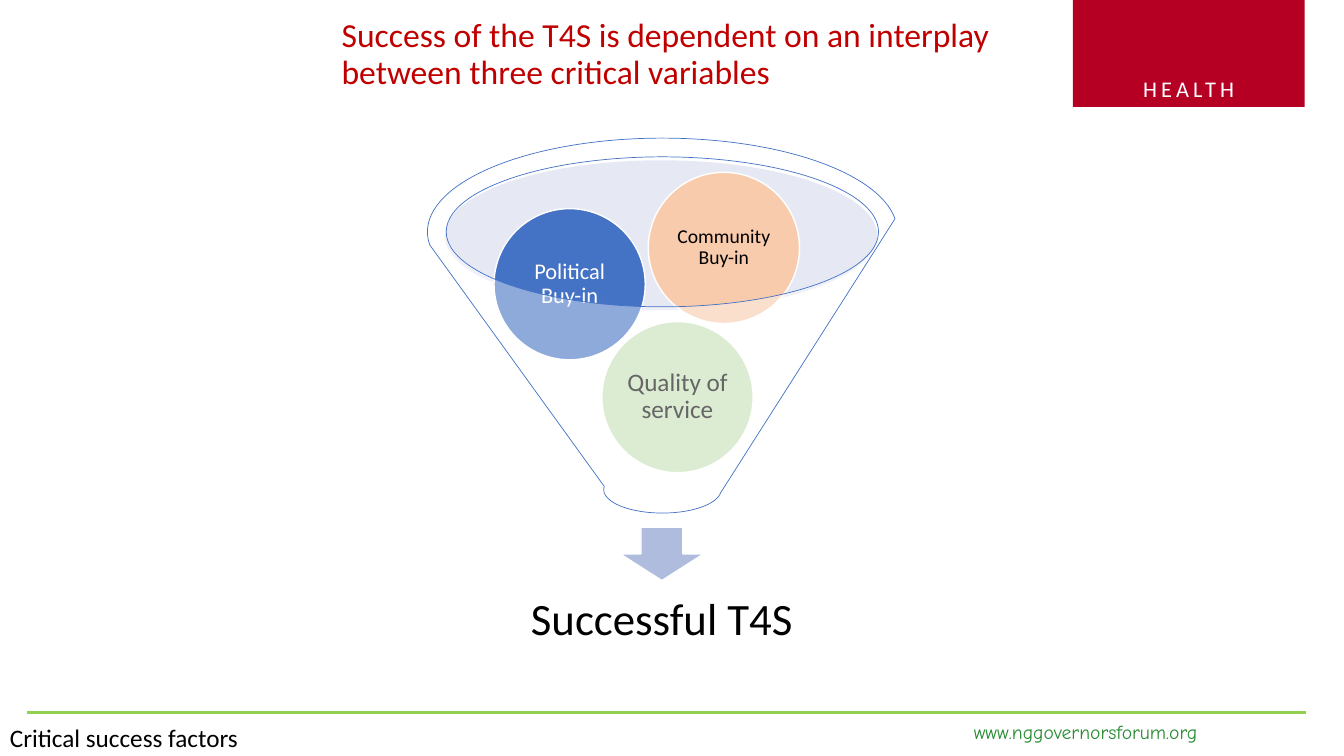
from lxml.etree import SubElement
from pptx import Presentation
from pptx.dml.color import RGBColor
from pptx.enum.shapes import MSO_CONNECTOR, MSO_SHAPE
from pptx.enum.text import MSO_ANCHOR, PP_ALIGN
from pptx.oxml.ns import qn
from pptx.util import Inches, Pt

WHITE = RGBColor(0xFF, 0xFF, 0xFF)
BLACK = RGBColor(0x00, 0x00, 0x00)
BANNER_RED = RGBColor(0xB5, 0x00, 0x24)
TITLE_RED = RGBColor(0xC0, 0x00, 0x00)
RULE_GREEN = RGBColor(0x92, 0xD0, 0x50)
LINK_GREEN = RGBColor(0x28, 0x8C, 0x32)
BLUE = RGBColor(0x44, 0x72, 0xC4)
PEACH = RGBColor(0xF8, 0xCB, 0xAD)
PALE_GREEN = RGBColor(0xC5, 0xE0, 0xB4)
RIM_BLUE = RGBColor(0xC1, 0xC9, 0xE4)
ARROW_BLUE = RGBColor(0xB0, 0xBC, 0xDE)


class SlideBuilder:
    """Draws styled elements on one slide."""

    font_name = "Calibri"
    diagram_spacing = 0.9

    def __init__(self, slide):
        self.slide = slide

    def label(self, shape, text, size, color, align=PP_ALIGN.LEFT,
              anchor=MSO_ANCHOR.TOP, inset=None, line_spacing=None,
              font_name=None, tracking=None):
        frame = shape.text_frame
        frame.word_wrap = True
        frame.vertical_anchor = anchor
        if inset is not None:
            frame.margin_left = frame.margin_right = Inches(inset)
            frame.margin_top = frame.margin_bottom = Inches(inset)
        paragraph = frame.paragraphs[0]
        paragraph.alignment = align
        if line_spacing:
            paragraph.line_spacing = line_spacing
        run = paragraph.add_run()
        run.text = text
        run.font.name = font_name or self.font_name
        run.font.size = Pt(size)
        run.font.color.rgb = color
        if tracking:
            run.font._element.set("spc", str(tracking * 100))

    def text(self, left, top, width, height, text, size, color, **style):
        box = self.slide.shapes.add_textbox(
            Inches(left), Inches(top), Inches(width), Inches(height))
        self.label(box, text, size, color, **style)

    def shape(self, kind, left, top, width, height, fill,
              line=None, line_width=1, opacity=None):
        shape = self.slide.shapes.add_shape(
            kind, Inches(left), Inches(top), Inches(width), Inches(height))
        shape.shadow.inherit = False
        shape.fill.solid()
        shape.fill.fore_color.rgb = fill
        if opacity is not None:
            color = shape._element.spPr.find(qn("a:solidFill"))[0]
            SubElement(color, qn("a:alpha")).set("val", str(opacity * 1000))
        if line is None:
            shape.line.fill.background()
        else:
            shape.line.color.rgb = line
            shape.line.width = Pt(line_width)
        return shape

    def variable(self, left, top, fill, text, size, color):
        circle = self.shape(MSO_SHAPE.OVAL, left, top, 1.5, 1.5, fill, WHITE)
        self.label(circle, text, size, color, PP_ALIGN.CENTER,
                   MSO_ANCHOR.MIDDLE, 0.02, self.diagram_spacing)

    def rule(self, left, right, top, color, width):
        line = self.slide.shapes.add_connector(
            MSO_CONNECTOR.STRAIGHT, Inches(left), Inches(top),
            Inches(right), Inches(top))
        line.line.color.rgb = color
        line.line.width = Pt(width)
        SubElement(line._element.spPr, qn("a:effectLst"))


def main():
    presentation = Presentation()
    presentation.slide_width = Inches(13.33)
    presentation.slide_height = Inches(7.5)
    slide = presentation.slides.add_slide(presentation.slide_layouts[6])
    builder = SlideBuilder(slide)

    banner = builder.shape(MSO_SHAPE.RECTANGLE, 10.64, -0.01, 2.3, 1.07, BANNER_RED)
    builder.label(banner, "HEALTH", 16, WHITE, PP_ALIGN.CENTER,
                  MSO_ANCHOR.BOTTOM, tracking=3)
    builder.rule(0.27, 12.95, 7.07, RULE_GREEN, 2.25)
    builder.text(9.56, 7.09, 2.86, 0.34, "www.nggovernorsforum.org", 14,
                 LINK_GREEN, font_name="Comic Neue")
    builder.text(3.29, 0, 7.47, 1.09,
                 "Success of the T4S is dependent on an interplay "
                 "between three critical variables",
                 24, TITLE_RED, anchor=MSO_ANCHOR.MIDDLE, line_spacing=0.9)

    builder.shape(MSO_SHAPE.OVAL, 4.41, 1.59, 4.29, 1.49, RIM_BLUE, opacity=40)
    builder.shape(MSO_SHAPE.DOWN_ARROW, 6.15, 5.23, 0.83, 0.53, ARROW_BLUE, WHITE)
    builder.text(4.57, 5.66, 3.99, 1, "Successful T4S", 32, BLACK,
                 align=PP_ALIGN.CENTER, anchor=MSO_ANCHOR.MIDDLE,
                 inset=0.25, line_spacing=builder.diagram_spacing)
    for variable in (
        (5.97, 3.19, PALE_GREEN, "Quality of service", 18, BLACK),
        (4.9, 2.07, BLUE, "Political Buy-in", 16, WHITE),
        (6.43, 1.71, PEACH, "Community Buy-in", 14, BLACK),
    ):
        builder.variable(*variable)
    builder.shape(MSO_SHAPE.FUNNEL, 4.24, 1.37, 4.66, 3.72, WHITE, BLUE, 0.5, 40)

    builder.text(0, 7.12, 6.66, 0.4, "Critical success factors", 18, BLACK)
    presentation.save("out.pptx")


if __name__ == "__main__":
    main()
